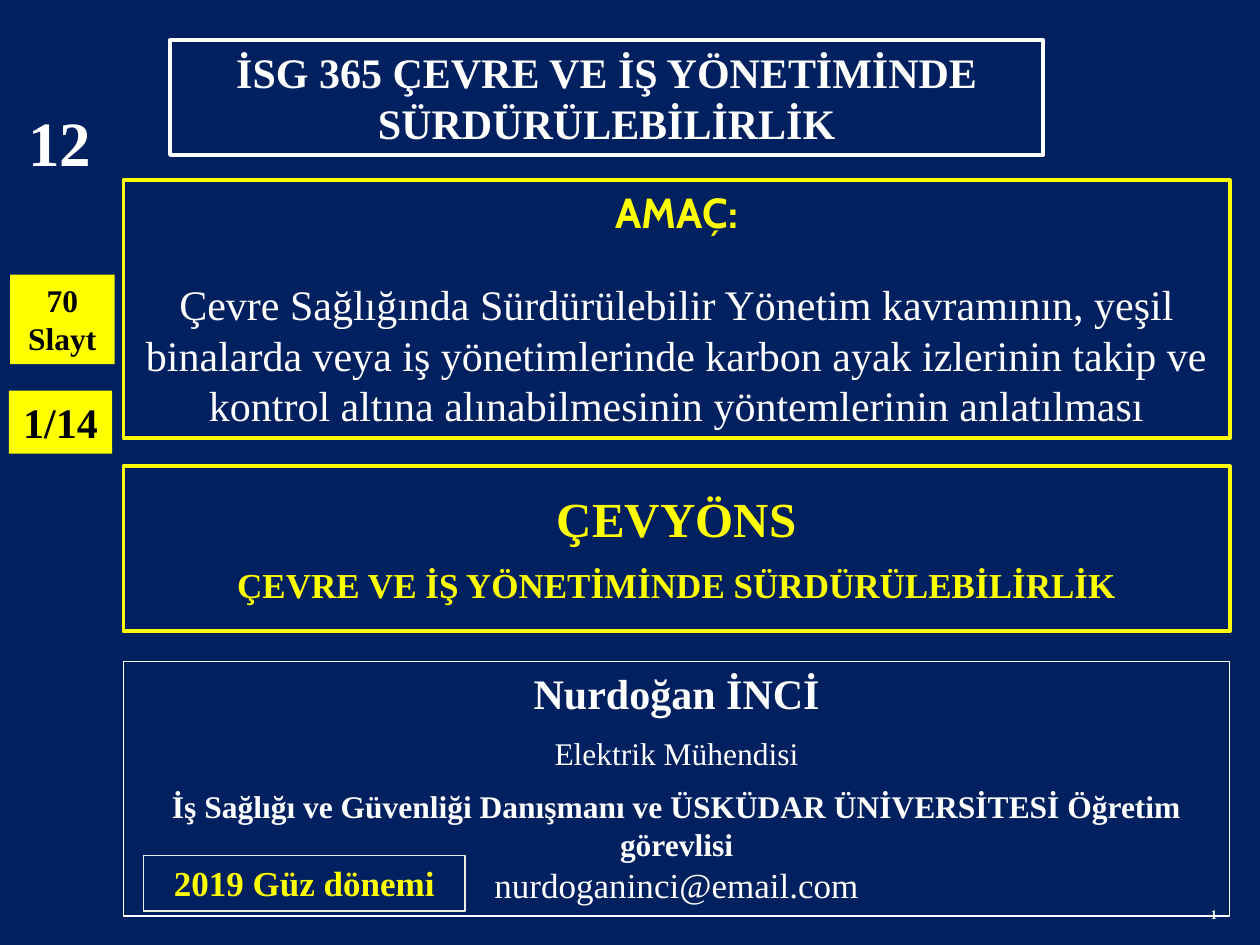
"""Build the opening slide of the lecture on sustainable management."""
from pptx import Presentation
from pptx.dml.color import RGBColor
from pptx.enum.shapes import MSO_SHAPE
from pptx.enum.text import MSO_ANCHOR, PP_ALIGN
from pptx.util import Inches, Pt

NAVY = RGBColor(0x00, 0x20, 0x60)
YELLOW = RGBColor(0xFF, 0xFF, 0x00)
WHITE = RGBColor(0xFF, 0xFF, 0xFF)
BLACK = RGBColor(0x00, 0x00, 0x00)
CREAM = RGBColor(0xEF, 0xEB, 0xE5)
PALE = RGBColor(0xF2, 0xF2, 0xF2)
SERIF = "Times New Roman"
LEFT, WIDE = 0.98, 8.78


def write(sp, lines, top=0.05, anchor=MSO_ANCHOR.TOP, align=PP_ALIGN.CENTER):
    tf = sp.text_frame
    tf.word_wrap = True
    tf.vertical_anchor = anchor
    tf.margin_left = tf.margin_right = Inches(0.1)
    tf.margin_top, tf.margin_bottom = Inches(top), Inches(0.05)
    for i, (text, size, color, bold, font, before) in enumerate(lines):
        p = tf.add_paragraph() if i else tf.paragraphs[0]
        p.text = text
        p.alignment = align
        p.space_before = Pt(before)
        p.font.name, p.font.size, p.font.bold = font, Pt(size), bold
        p.font.color.rgb = color


def panel(box, lines, fill=None, line=None, weight=2.25, top=0.05):
    sp = s.shapes.add_shape(MSO_SHAPE.RECTANGLE, *map(Inches, box))
    sp.shadow.inherit = False
    if fill is None:
        sp.fill.background()
    else:
        sp.fill.solid()
        sp.fill.fore_color.rgb = fill
    if line is None:
        sp.line.fill.background()
    else:
        sp.line.color.rgb = line
        sp.line.width = Pt(weight)
    write(sp, lines, top)


prs = Presentation()
prs.slide_width, prs.slide_height = Inches(10), Inches(7.5)
s = prs.slides.add_slide(prs.slide_layouts[5])
s.background.fill.solid()
s.background.fill.fore_color.rgb = NAVY

title = s.shapes.title
title.left, title.top, title.width, title.height = map(Inches, (1.35, 0.32, 6.93, 0.91))
title.line.color.rgb = WHITE
title.line.width = Pt(2.25)
write(title, [("İSG 365 ÇEVRE VE İŞ YÖNETİMİNDE SÜRDÜRÜLEBİLİRLİK", 24, WHITE, True, SERIF, 0)])

panel((LEFT, 1.43, WIDE, 2.05), [
    ("AMAÇ:", 24, YELLOW, True, "Cabin", 0),
    ("Çevre Sağlığında Sürdürülebilir Yönetim kavramının, yeşil binalarda veya iş "
     "yönetimlerinde karbon ayak izlerinin takip ve kontrol altına alınabilmesinin "
     "yöntemlerinin anlatılması", 24, WHITE, False, SERIF, 24),
], line=YELLOW)
panel((LEFT, 5.25, WIDE, 2.02), [
    ("Nurdoğan İNCİ", 24, WHITE, True, SERIF, 0),
    ("Elektrik Mühendisi", 18, WHITE, False, SERIF, 9),
    ("İş Sağlığı ve Güvenliği Danışmanı ve ÜSKÜDAR ÜNİVERSİTESİ Öğretim görevlisi",
     18, WHITE, True, SERIF, 9),
    ("nurdoganinci@email.com", 20, WHITE, False, SERIF, 0),
], line=WHITE, weight=0.75)

number = s.shapes.add_textbox(*map(Inches, (0.06, 0.77, 0.83, 0.71)))
write(number, [("12", 36, WHITE, True, SERIF, 0)])
page = s.shapes.add_textbox(*map(Inches, (8.5, 7.09, 1.26, 0.28)))
write(page, [("1", 7.5, PALE, True, SERIF, 0)], anchor=MSO_ANCHOR.BOTTOM, align=PP_ALIGN.RIGHT)

panel((0.08, 2.18, 0.83, 0.71),
      [(text, 18, BLACK, True, SERIF, 0) for text in ("70", "Slayt")], fill=YELLOW)
panel((0.07, 3.1, 0.82, 0.5), [("1/14", 24, BLACK, True, SERIF, 0)], fill=YELLOW)
panel((1.14, 6.79, 2.55, 0.44), [("2019 Güz dönemi", 20, YELLOW, True, SERIF, 0)],
      line=CREAM, weight=0.75)
panel((LEFT, 3.7, WIDE, 1.31), [
    ("ÇEVYÖNS", 28, YELLOW, True, SERIF, 0),
    ("ÇEVRE VE İŞ YÖNETİMİNDE SÜRDÜRÜLEBİLİRLİK", 20, YELLOW, True, SERIF, 9),
], line=YELLOW, top=0.18)

prs.save("out.pptx")
